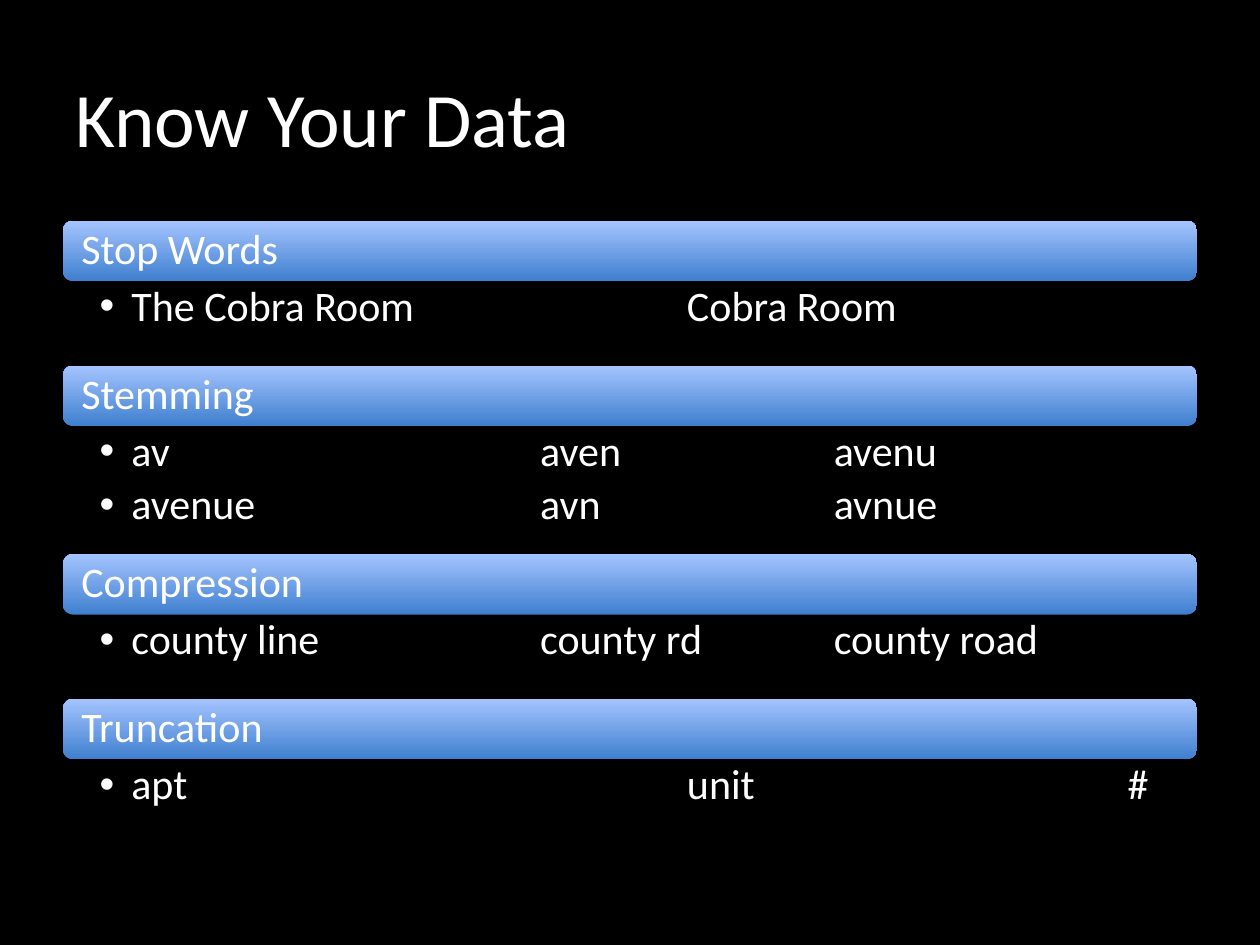
from lxml.etree import SubElement
from pptx import Presentation
from pptx.dml.color import RGBColor
from pptx.enum.shapes import MSO_SHAPE
from pptx.enum.text import MSO_ANCHOR, PP_ALIGN
from pptx.oxml.ns import qn
from pptx.util import Cm, Pt

WHITE, BLACK = "FFFFFF", "000000"
BAR_GRADIENT = ("3F7FCE", "A4C4FF")
BAR_HEIGHT = 1.22
ROW_HEIGHT, BODY_PADDING = 0.88, 0.82
TAB_STEP, BULLET_INDENT = 2.96, 0.64

TITLE_FRAME = {"vertical_anchor": MSO_ANCHOR.MIDDLE}
BAR_FRAME = {"vertical_anchor": MSO_ANCHOR.MIDDLE, "margin_left": Cm(0.31)}
BODY_FRAME = {
    "vertical_anchor": MSO_ANCHOR.TOP,
    "margin_left": Cm(0.74),
    "margin_right": Cm(0.48),
    "margin_top": Cm(0.08),
    "margin_bottom": Cm(0.08),
}
TITLE_PARAGRAPH = {"alignment": PP_ALIGN.LEFT}
BAR_PARAGRAPH = {"alignment": PP_ALIGN.LEFT, "line_spacing": 0.9}
BODY_PARAGRAPH = {**BAR_PARAGRAPH, "level": 1, "space_after": Pt(4.6)}

SECTIONS = [
    ("Stop Words", ["The Cobra Room \t\tCobra Room"]),
    ("Stemming", ["av\t\t\taven\t\tavenu", "avenue\t\tavn\t\tavnue"]),
    ("Compression", ["county line\t\tcounty rd\tcounty road"]),
    ("Truncation", ["apt\t\t\t\tunit\t\t\t#"]),
]


def color(value):
    """Turn a hex string into a colour."""
    return RGBColor.from_string(value)


def set_attributes(target, values):
    """Set each attribute of the target from a dict."""
    for name, value in values.items():
        setattr(target, name, value)


def write_lines(shape, lines, size, frame_format, paragraph_format):
    """Fill a shape with one paragraph per line and return the paragraphs."""
    frame = shape.text_frame
    set_attributes(frame, {"word_wrap": True, **frame_format})
    for index, line in enumerate(lines):
        paragraph = frame.add_paragraph() if index else frame.paragraphs[0]
        set_attributes(paragraph, paragraph_format)
        run = paragraph.add_run()
        run.text = line
        set_attributes(run.font, {"name": "Calibri", "size": Pt(size)})
        run.font.color.rgb = color(WHITE)
    return frame.paragraphs


def add_bullet(paragraph):
    """Give a paragraph a hanging bullet and evenly spaced tabs."""
    properties = paragraph._p.get_or_add_pPr()
    lengths = {"marL": BULLET_INDENT, "indent": -BULLET_INDENT, "defTabSz": TAB_STEP}
    for name, length in lengths.items():
        properties.set(name, str(Cm(length)))
    SubElement(properties, qn("a:buFont"), typeface="Arial")
    SubElement(properties, qn("a:buChar"), char="•")


def add_title(slide, text, left, top, width, height):
    """Place the slide title in the given box."""
    shape = slide.shapes.add_textbox(Cm(left), Cm(top), Cm(width), Cm(height))
    write_lines(shape, [text], 44, TITLE_FRAME, TITLE_PARAGRAPH)


def add_bar(slide, text, left, top, width, height):
    """Place a rounded gradient heading bar in the given box."""
    bar = slide.shapes.add_shape(
        MSO_SHAPE.ROUNDED_RECTANGLE, Cm(left), Cm(top), Cm(width), Cm(height)
    )
    bar.shadow.inherit = False
    bar.line.fill.background()
    bar.fill.gradient()
    bar.fill.gradient_angle = 90
    for position, (stop, value) in enumerate(zip(bar.fill.gradient_stops, BAR_GRADIENT)):
        stop.position = position
        stop.color.rgb = color(value)
    write_lines(bar, [text], 24, BAR_FRAME, BAR_PARAGRAPH)


def add_section(slide, heading, rows, left, top, width):
    """Place a heading bar with its bulleted rows and return the bottom edge."""
    add_bar(slide, heading, left, top, width, BAR_HEIGHT)
    body_top = top + BAR_HEIGHT
    body_height = BODY_PADDING + ROW_HEIGHT * len(rows)
    body = slide.shapes.add_textbox(Cm(left), Cm(body_top), Cm(width), Cm(body_height))
    for paragraph in write_lines(body, rows, 24, BODY_FRAME, BODY_PARAGRAPH):
        add_bullet(paragraph)
    return body_top + body_height


def add_sections(slide, left, top, width):
    """Stack all sections downwards from the given top."""
    for heading, rows in SECTIONS:
        top = add_section(slide, heading, rows, left, top, width)


def main():
    """Build and save the presentation."""
    presentation = Presentation()
    set_attributes(presentation, {"slide_width": Cm(25.4), "slide_height": Cm(19.05)})
    slide = presentation.slides.add_slide(presentation.slide_layouts[6])
    slide.background.fill.solid()
    slide.background.fill.fore_color.rgb = color(BLACK)
    add_title(slide, "Know Your Data", 1.27, 0.76, 22.86, 3.18)
    add_sections(slide, 1.27, 4.45, 22.86)
    presentation.save("out.pptx")


if __name__ == "__main__":
    main()
